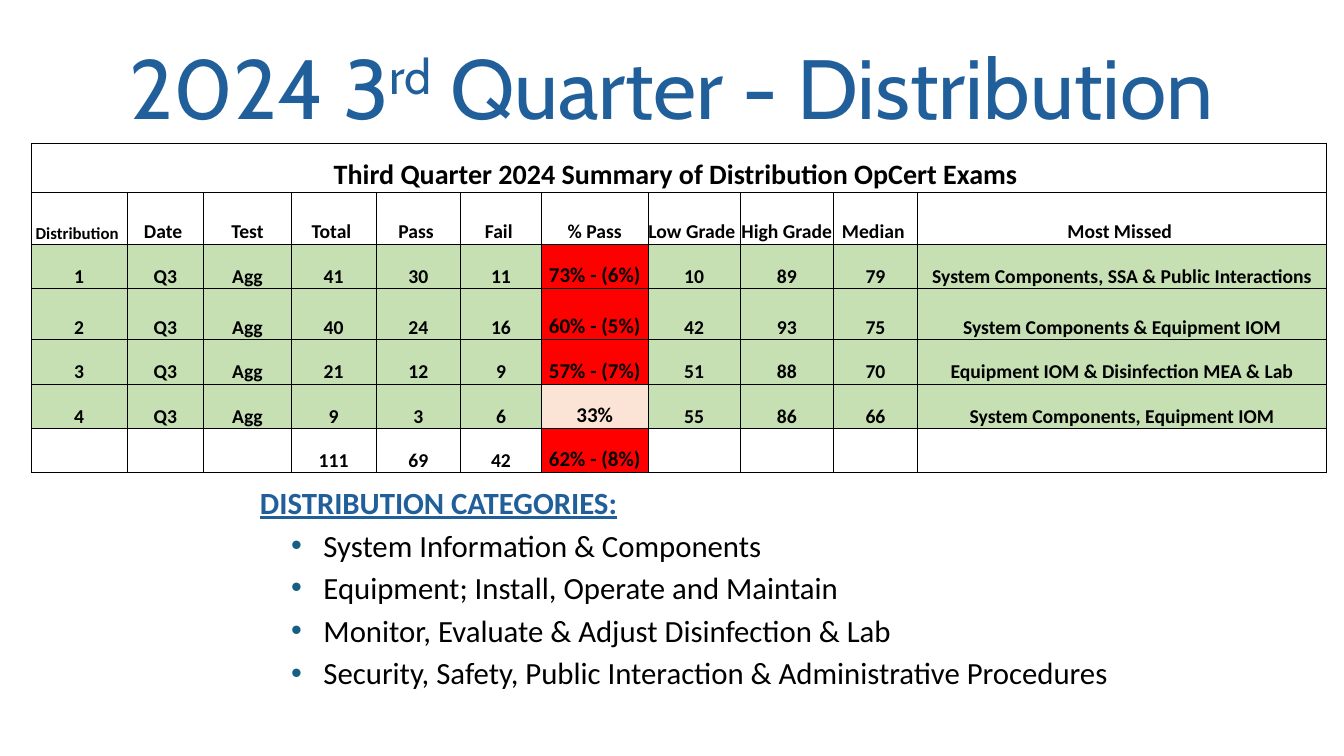
"""Build the third quarter distribution exam summary slide."""
from dataclasses import dataclass

from lxml import etree
from pptx import Presentation
from pptx.dml.color import RGBColor
from pptx.enum.text import MSO_ANCHOR, MSO_AUTO_SIZE, PP_ALIGN
from pptx.oxml.ns import qn
from pptx.slide import Slide
from pptx.table import _Cell
from pptx.util import Inches, Pt

CENTER, LEFT = PP_ALIGN.CENTER, PP_ALIGN.LEFT
BOTTOM, TOP = MSO_ANCHOR.BOTTOM, MSO_ANCHOR.TOP
NO_AUTOFIT = MSO_AUTO_SIZE.NONE

BLUE, BLACK, BULLET_BLUE = "215F9A", "000000", "156082"
GREEN, RED, PEACH = "C6E0B4", "FF0000", "FBE3D6"
TITLE_ONLY = 5
PASS_COLUMN = 6
BORDER_WIDTH = Pt(0.5)
BORDER_TAGS = ("a:lnL", "a:lnR", "a:lnT", "a:lnB")
ZERO_MARGINS = dict.fromkeys(("margin_left", "margin_right", "margin_top", "margin_bottom"), 0)
COLUMN_WIDTHS = (0.95, 0.76, 0.87, 0.84, 0.84, 0.8, 1.06, 0.91, 0.93, 0.83, 4.06)
HEADERS = ("Distribution ", "Date ", "Test", "Total ", "Pass ", "Fail ", "% Pass",
           "Low Grade ", "High Grade ", "Median ", "Most Missed ")
TABLE_TITLE = "Third Quarter 2024 Summary of Distribution OpCert Exams "
CATEGORIES = (
    "System Information & Components",
    "Equipment; Install, Operate and Maintain",
    "Monitor, Evaluate & Adjust Disinfection & Lab",
    "Security, Safety, Public Interaction & Administrative Procedures",
)


@dataclass(frozen=True)
class TextStyle:
    """Character format of a run."""
    size: float
    color: str = BLACK
    name: str = "Calibri"
    bold: bool = False
    underline: bool = False


@dataclass(frozen=True)
class TableRow:
    """One table row with its height and fills."""
    height: float
    texts: tuple[str, ...]
    fill: str | None = None
    pass_fill: str | None = None
    sizes: tuple[tuple[int, int], ...] = ()


def exam_row(height: float, level: int, counts: tuple[str, ...], pass_rate: str,
             grades: tuple[str, ...], missed: str, pass_fill: str = RED) -> TableRow:
    """Describe the results of one certification level."""
    texts = (str(level), "Q3", "Agg", *counts, pass_rate, *grades, missed)
    return TableRow(height, texts, GREEN, pass_fill, ((PASS_COLUMN, 15),))


ROWS = (
    TableRow(0.49, (TABLE_TITLE,), sizes=((0, 20),)),
    TableRow(0.51, HEADERS, sizes=((0, 12),)),
    exam_row(0.44, 1, ("41", "30", "11"), "73% - (6%)", ("10", "89", "79"),
             "System Components, SSA & Public Interactions"),
    exam_row(0.51, 2, ("40", "24", "16"), "60% - (5%)", ("42", "93", "75"),
             "System Components & Equipment IOM"),
    exam_row(0.44, 3, ("21", "12", "9"), "57% - (7%)", ("51", "88", "70"),
             "Equipment IOM & Disinfection MEA & Lab"),
    exam_row(0.44, 4, ("9", "3", "6"), "33%", ("55", "86", "66"),
             "System Components, Equipment IOM", PEACH),
    TableRow(0.44, ("", "", "", "111", "69", "42", "62% - (8%)"),
             pass_fill=RED, sizes=((PASS_COLUMN, 15),)),
)


def rgb(color: str) -> RGBColor:
    """Turn a hex string into a colour."""
    return RGBColor.from_string(color)


def set_format(target: object, values: dict) -> None:
    """Set each attribute named in the format values."""
    for name, value in values.items():
        setattr(target, name, value)


def add_run(paragraph, text: str, style: TextStyle):
    """Append a formatted run to a paragraph."""
    run = paragraph.add_run()
    run.text = text
    set_format(run.font, {"size": Pt(style.size), "name": style.name,
                          "bold": style.bold, "underline": style.underline})
    run.font.color.rgb = rgb(style.color)
    return run


def add_solid_fill(parent, color: str) -> None:
    """Append a solid fill element."""
    fill = etree.SubElement(parent, qn("a:solidFill"))
    etree.SubElement(fill, qn("a:srgbClr"), val=color)


def add_title(slide: Slide) -> None:
    """Place and format the slide title."""
    title = slide.shapes.title
    set_format(title, {"left": Inches(0.41), "top": Inches(0.34),
                       "width": Inches(12.5), "height": Inches(1.08)})
    set_format(title.text_frame, {"vertical_anchor": BOTTOM, "auto_size": NO_AUTOFIT,
                                  "word_wrap": True})
    paragraph = title.text_frame.paragraphs[0]
    set_format(paragraph, {"alignment": CENTER, "line_spacing": 0.9})
    style = TextStyle(60, BLUE, "Cabin")
    add_run(paragraph, "2024 3", style)
    ordinal = add_run(paragraph, "rd", style)
    ordinal.font._element.set("baseline", "30000")
    add_run(paragraph, " Quarter - Distribution", style)


def add_borders(cell: _Cell) -> None:
    """Draw a thin black line on all sides of a cell."""
    properties = cell._tc.get_or_add_tcPr()
    for position, tag in enumerate(BORDER_TAGS):
        line = etree.Element(qn(tag), w=str(BORDER_WIDTH))
        add_solid_fill(line, BLACK)
        properties.insert(position, line)


def format_cell(cell: _Cell, text: str, size: int, fill: str | None) -> None:
    """Fill, border and label a table cell."""
    set_format(cell, {**ZERO_MARGINS, "vertical_anchor": BOTTOM})
    if fill:
        cell.fill.solid()
        cell.fill.fore_color.rgb = rgb(fill)
    else:
        cell.fill.background()
    add_borders(cell)
    paragraph = cell.text_frame.paragraphs[0]
    paragraph.alignment = CENTER
    if text:
        add_run(paragraph, text, TextStyle(size, bold=True))


def add_exam_table(slide: Slide) -> None:
    """Add the table of exam results."""
    column_count = len(COLUMN_WIDTHS)
    table = slide.shapes.add_table(len(ROWS), column_count, Inches(0.31), Inches(1.42),
                                   Inches(12.86), Inches(3.26)).table
    set_format(table, {"first_row": False, "horz_banding": False})
    for column, width in zip(table.columns, COLUMN_WIDTHS):
        column.width = Inches(width)
    for row_index, row in enumerate(ROWS):
        table.rows[row_index].height = Inches(row.height)
        texts = row.texts + ("",) * (column_count - len(row.texts))
        sizes = dict(row.sizes)
        for column_index, text in enumerate(texts):
            fill = row.pass_fill if column_index == PASS_COLUMN else row.fill
            format_cell(table.cell(row_index, column_index), text,
                        sizes.get(column_index, 14), fill)
    table.cell(0, 0).merge(table.cell(0, column_count - 1))


def add_bullet(paragraph) -> None:
    """Give a paragraph a coloured bullet and hanging indent."""
    properties = paragraph._p.get_or_add_pPr()
    set_format_values = {"marL": Inches(0.63), "indent": Inches(-0.32)}
    for name, value in set_format_values.items():
        properties.set(name, str(value))
    color = etree.SubElement(properties, qn("a:buClr"))
    etree.SubElement(color, qn("a:srgbClr"), val=BULLET_BLUE)
    etree.SubElement(properties, qn("a:buFont"), typeface="Arial")
    etree.SubElement(properties, qn("a:buChar"), char="•")


def add_categories(slide: Slide) -> None:
    """Add the heading and bulleted list of categories."""
    box = slide.shapes.add_textbox(Inches(2.48), Inches(4.75), Inches(9.79), Inches(2.33))
    frame = box.text_frame
    set_format(frame, {"word_wrap": True, "vertical_anchor": TOP, "auto_size": NO_AUTOFIT})
    heading = frame.paragraphs[0]
    heading.alignment = LEFT
    add_run(heading, "DISTRIBUTION CATEGORIES:", TextStyle(22, BLUE, bold=True, underline=True))
    for category in CATEGORIES:
        paragraph = frame.add_paragraph()
        add_bullet(paragraph)
        set_format(paragraph, {"alignment": LEFT, "space_before": Pt(4)})
        add_run(paragraph, category, TextStyle(22))


def main() -> None:
    """Build and save the presentation."""
    presentation = Presentation()
    set_format(presentation, {"slide_width": Inches(13.33), "slide_height": Inches(7.5)})
    slide = presentation.slides.add_slide(presentation.slide_layouts[TITLE_ONLY])
    add_title(slide)
    add_categories(slide)
    add_exam_table(slide)
    presentation.save("out.pptx")


if __name__ == "__main__":
    main()
